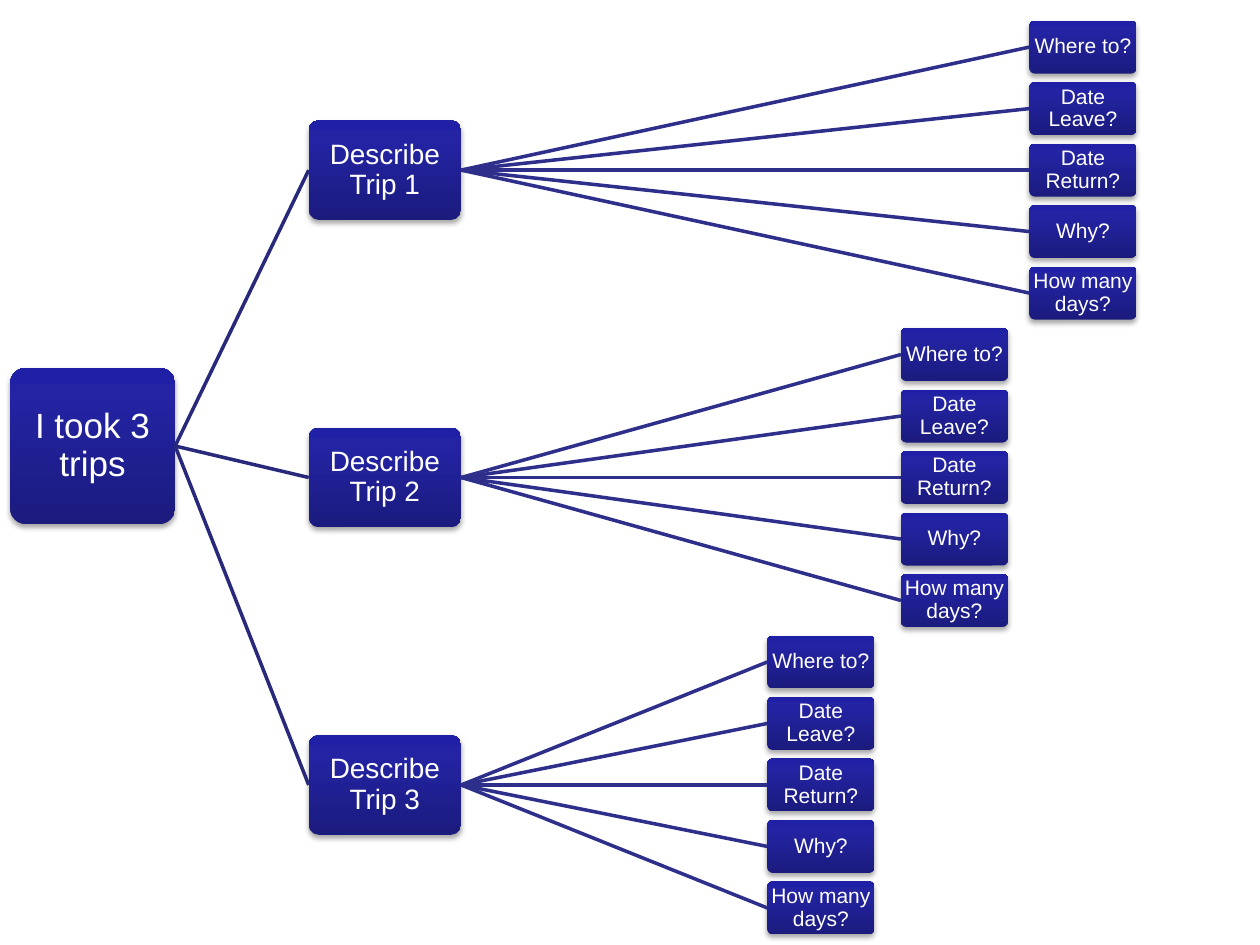
from dataclasses import dataclass

from pptx import Presentation
from pptx.dml.color import RGBColor
from pptx.enum.shapes import MSO_CONNECTOR as Connector, MSO_SHAPE as Shape
from pptx.enum.text import MSO_ANCHOR as Anchor, PP_ALIGN as Align
from pptx.oxml import parse_xml
from pptx.oxml.ns import nsdecls
from pptx.shapes.autoshape import Shape as AutoShape
from pptx.slide import Slide
from pptx.util import Inches, Pt


@dataclass(frozen=True)
class Level:
    """Size and type of the boxes at one depth of the tree."""
    width: float
    height: float
    font_size: int
    inset: float


@dataclass(frozen=True)
class Trip:
    title: str
    questions_left: float


@dataclass(frozen=True)
class Theme:
    font: str = "Arial"
    text: str = "FFFFFF"
    gradient: tuple = ((0, "1B1B7E"), (80, "2323A3"), (100, "2020A6"))
    shadow: str = "000000"
    trip_line: str = "29297B"
    question_line: str = "2E2E8B"
    line_width: int = 2
    root: Level = Level(1.31, 1.24, 20, 0.02)
    trip: Level = Level(1.21, 0.79, 16, 0.02)
    question: Level = Level(0.85, 0.42, 12, 0)


THEME = Theme()
QUESTIONS = ("Where to?", "Date Leave?", "Date Return?", "Why?", "How many days?")
TRIPS = (
    Trip("Describe Trip 1", 8.17),
    Trip("Describe Trip 2", 7.15),
    Trip("Describe Trip 3", 6.09),
)
ROOT_LEFT, ROOT_CENTER = 0.08, 3.54
TRIP_LEFT, TRIPS_CENTER = 2.45, 3.79
TRIP_PITCH = 2.44
QUESTION_PITCH = TRIP_PITCH / len(QUESTIONS)


def spread(center: float, pitch: float, count: int) -> list[float]:
    """Evenly spaced positions around a center."""
    return [center + (index - (count - 1) / 2) * pitch for index in range(count)]


def style_box(shape: AutoShape) -> None:
    """Bottom-to-top gradient, no outline, soft shadow below."""
    stops = "".join(
        f'<a:gs pos="{position * 1000}"><a:srgbClr val="{color}"/></a:gs>'
        for position, color in THEME.gradient
    )
    properties = shape.element.spPr
    properties.append(parse_xml(
        f'<a:gradFill {nsdecls("a")} rotWithShape="1"><a:gsLst>{stops}</a:gsLst>'
        '<a:lin ang="16200000" scaled="0"/></a:gradFill>'
    ))
    shape.line.fill.background()
    properties.append(parse_xml(
        f'<a:effectLst {nsdecls("a")}><a:outerShdw blurRad="{Pt(3.1)}" '
        f'dist="{Pt(1.8)}" dir="5400000" rotWithShape="0">'
        f'<a:srgbClr val="{THEME.shadow}"><a:alpha val="35000"/></a:srgbClr>'
        '</a:outerShdw></a:effectLst>'
    ))


def add_box(slide: Slide, text: str, left: float, center: float, level: Level) -> AutoShape:
    shape = slide.shapes.add_shape(
        Shape.ROUNDED_RECTANGLE, Inches(left), Inches(center - level.height / 2),
        Inches(level.width), Inches(level.height),
    )
    shape.adjustments[0] = 0.1
    style_box(shape)

    text_frame = shape.text_frame
    text_frame.text = text
    text_frame.word_wrap = True
    text_frame.vertical_anchor = Anchor.MIDDLE
    text_frame.margin_left = text_frame.margin_right = Inches(level.inset)
    text_frame.margin_top = text_frame.margin_bottom = Inches(level.inset)
    paragraph = text_frame.paragraphs[0]
    paragraph.alignment = Align.CENTER
    paragraph.line_spacing = 0.9
    font = paragraph.runs[0].font
    font.name = THEME.font
    font.size = Pt(level.font_size)
    font.color.rgb = RGBColor.from_string(THEME.text)
    return shape


def join(slide: Slide, parent: AutoShape, child: AutoShape, color: str) -> None:
    """Line from the parent's right side to the child's left side."""
    connector = slide.shapes.add_connector(Connector.STRAIGHT, 0, 0, 0, 0)
    connector.begin_connect(parent, 3)
    connector.end_connect(child, 1)
    connector.line.color.rgb = RGBColor.from_string(color)
    connector.line.width = Pt(THEME.line_width)
    connector.element.spPr.append(parse_xml(f'<a:effectLst {nsdecls("a")}/>'))


def main() -> None:
    presentation = Presentation()
    presentation.slide_width = Inches(10)
    presentation.slide_height = Inches(7.5)
    slide = presentation.slides.add_slide(presentation.slide_layouts[6])

    # Root of the tree
    root = add_box(slide, "I took 3 trips", ROOT_LEFT, ROOT_CENTER, THEME.root)

    # Trips, each with its column of questions
    for trip, center in zip(TRIPS, spread(TRIPS_CENTER, TRIP_PITCH, len(TRIPS))):
        trip_box = add_box(slide, trip.title, TRIP_LEFT, center, THEME.trip)
        join(slide, root, trip_box, THEME.trip_line)
        rows = spread(center, QUESTION_PITCH, len(QUESTIONS))
        for question, row in zip(QUESTIONS, rows):
            question_box = add_box(slide, question, trip.questions_left, row, THEME.question)
            join(slide, trip_box, question_box, THEME.question_line)

    presentation.save("out.pptx")


if __name__ == "__main__":
    main()
